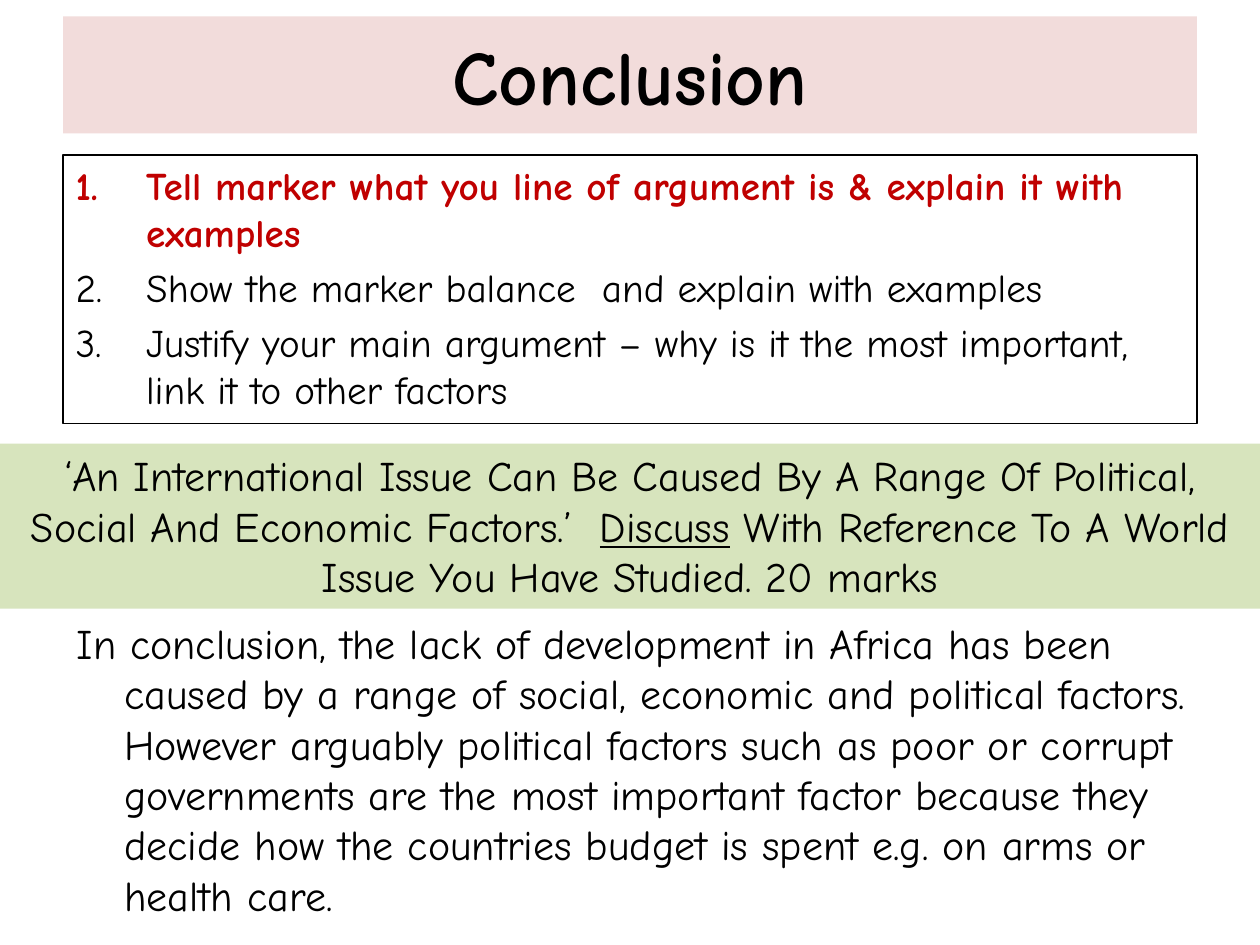
from dataclasses import dataclass

import pptx
import pptx.dml.color
import pptx.enum.text
import pptx.oxml.xmlchemy
import pptx.util
from lxml import etree
from pptx.oxml.ns import qn

RGBColor = pptx.dml.color.RGBColor
PP_ALIGN = pptx.enum.text.PP_ALIGN
MSO_ANCHOR = pptx.enum.text.MSO_ANCHOR

BLACK = RGBColor(0x00, 0x00, 0x00)
WHITE = RGBColor(0xFF, 0xFF, 0xFF)
RED = RGBColor(0xC0, 0x00, 0x00)
PINK = RGBColor(0xF2, 0xDC, 0xDB)
GREEN = RGBColor(0xD7, 0xE4, 0xBD)

FONT = "Comic Neue"
WIDTH, HEIGHT = pptx.util.Inches(10), pptx.util.Inches(7.5)
COLS, ROWS = 20, 75


@dataclass(frozen=True)
class Cell:
    col: float
    row: float
    cols: float
    rows: float

    def bounds(self) -> tuple[int, int, int, int]:
        dx, dy = WIDTH / COLS, HEIGHT / ROWS
        return (round(self.col * dx), round(self.row * dy),
                round(self.cols * dx), round(self.rows * dy))


@dataclass(frozen=True)
class Run:
    text: str
    size: float
    color: RGBColor = BLACK
    bold: bool = False
    underline: bool = False


TITLE = Cell(1, 1.3, 18, 9.3)
STEPS = Cell(1, 12.3, 18, 21.3)
ANSWER = Cell(1.02, 48.5, 18.26, 25.2)
QUESTION = Cell(0, 35.2, 20, 13.1)

STEP_RUNS = [
    Run("Tell marker what you line of argument is & explain it with examples", 22.4, RED, True),
    Run("Show the marker balance  and explain with examples", 22.4),
    Run("Justify your main argument – why is it the most important, link it to other factors", 22.4),
]
ANSWER_RUN = Run(
    "In conclusion, the lack of development in Africa has been caused by a range of "
    "social, economic and political factors. However arguably political factors such as "
    "poor or corrupt governments are the most important factor because they decide how "
    "the countries budget is spent e.g. on arms or health care.", 24)
QUESTION_RUNS = [
    Run("‘An International Issue Can Be Caused By A Range Of Political, "
        "Social And Economic Factors.’  ", 24),
    Run("Discuss", 24, underline=True),
    Run(" With Reference To A World Issue You Have Studied. 20 marks", 24),
]


def place(sp, cell: Cell, fill: RGBColor | None = None) -> None:
    sp.left, sp.top, sp.width, sp.height = cell.bounds()
    if fill is not None:
        sp.fill.solid()
        sp.fill.fore_color.rgb = fill
    sp.text_frame.word_wrap = True
    sp.text_frame.auto_size = pptx.enum.text.MSO_AUTO_SIZE.NONE


def add_run(p, run: Run) -> None:
    r = p.add_run()
    r.text = run.text
    r.font.name = FONT
    r.font.size = pptx.util.Pt(run.size)
    r.font.color.rgb = run.color
    r.font.bold = run.bold
    r.font.underline = run.underline


def hang(p, indent: float) -> None:
    pPr = p._p.get_or_add_pPr()
    pPr.set("marL", str(pptx.util.Inches(indent)))
    pPr.set("indent", str(-pptx.util.Inches(indent)))


def add_step(p, run: Run) -> None:
    hang(p, 0.56)
    p.space_before = pptx.util.Pt(4.5)
    bu = etree.SubElement(p._p.get_or_add_pPr(), qn("a:buAutoNum"))
    bu.set("type", "arabicPeriod")
    add_run(p, run)


def main() -> None:
    prs = pptx.Presentation()
    prs.slide_width, prs.slide_height = WIDTH, HEIGHT
    s = prs.slides.add_slide(prs.slide_layouts[1])

    title = s.shapes.title
    place(title, TITLE, PINK)
    title.text_frame.vertical_anchor = MSO_ANCHOR.MIDDLE
    p = title.text_frame.paragraphs[0]
    p.alignment = PP_ALIGN.CENTER
    add_run(p, Run("Conclusion", 44, bold=True))

    steps = s.placeholders[1]
    place(steps, STEPS)
    steps.line.color.rgb = BLACK
    steps.line.width = pptx.util.Pt(0.75)
    tf = steps.text_frame
    for i, run in enumerate(STEP_RUNS):
        add_step(tf.add_paragraph() if i else tf.paragraphs[0], run)

    answer = s.shapes.add_textbox(*ANSWER.bounds())
    place(answer, ANSWER, WHITE)
    p = answer.text_frame.paragraphs[0]
    hang(p, 0.38)
    add_run(p, ANSWER_RUN)

    question = s.shapes.add_textbox(*QUESTION.bounds())
    place(question, QUESTION, GREEN)
    p = question.text_frame.paragraphs[0]
    p.alignment = PP_ALIGN.CENTER
    for run in QUESTION_RUNS:
        add_run(p, run)

    prs.save("out.pptx")


if __name__ == "__main__":
    main()
